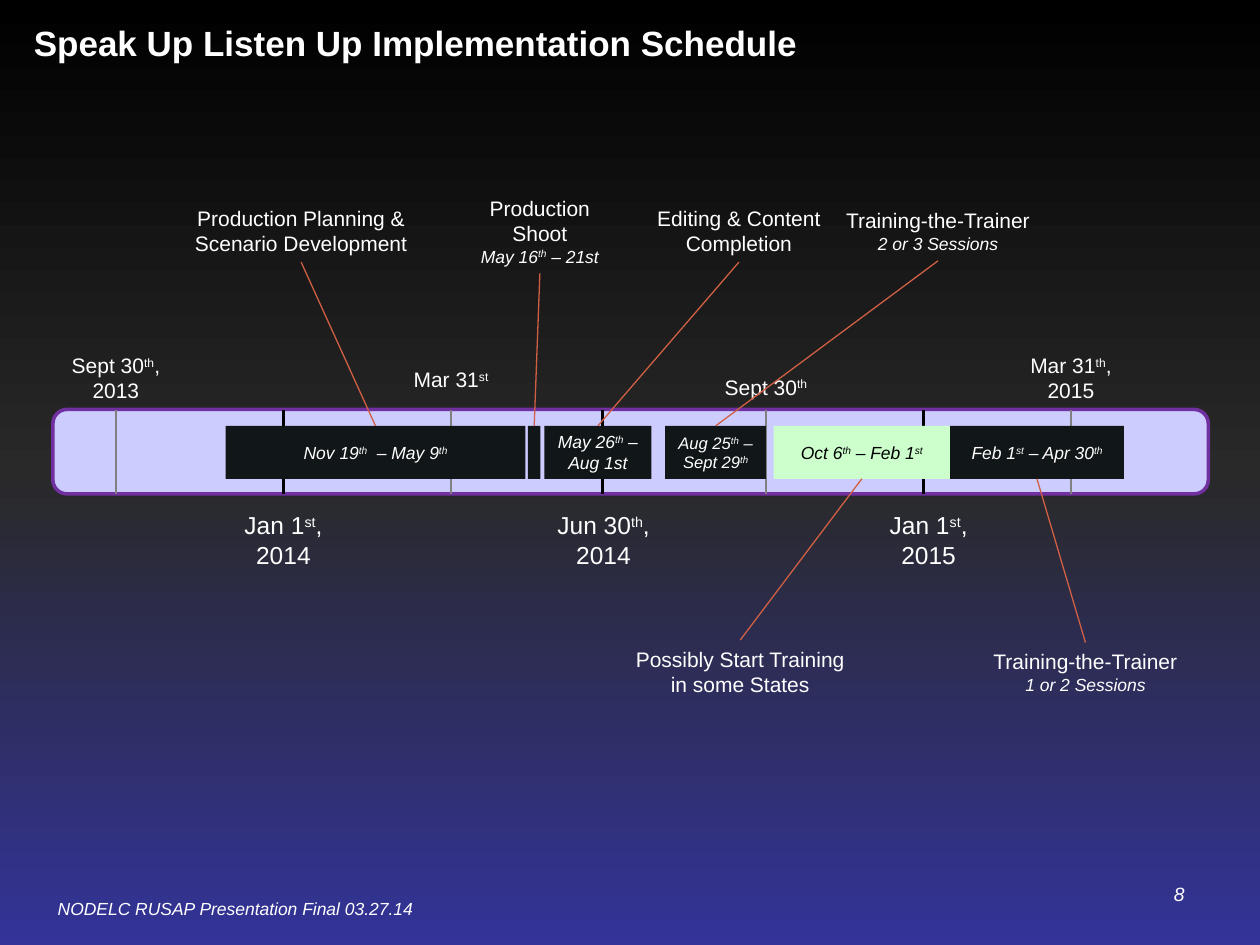
from copy import deepcopy
from dataclasses import dataclass

from pptx import Presentation
from pptx.dml.color import RGBColor
from pptx.enum.shapes import MSO_CONNECTOR, MSO_SHAPE
from pptx.enum.text import MSO_ANCHOR, MSO_AUTO_SIZE, PP_ALIGN
from pptx.oxml.ns import qn
from pptx.util import Inches, Pt

RECT, ROUND = MSO_SHAPE.RECTANGLE, MSO_SHAPE.ROUNDED_RECTANGLE
STRAIGHT = MSO_CONNECTOR.STRAIGHT
TOP, MIDDLE = MSO_ANCHOR.TOP, MSO_ANCHOR.MIDDLE
LEFT, CENTER, RIGHT = PP_ALIGN.LEFT, PP_ALIGN.CENTER, PP_ALIGN.RIGHT
FIT = MSO_AUTO_SIZE.SHAPE_TO_FIT_TEXT
UPPER, LOWER = 0, 2


@dataclass(frozen=True)
class Theme:
    """Colours, font and type sizes of the slide."""
    font: str = "Arial"
    white: str = "FFFFFF"
    black: str = "000000"
    dark: str = "111618"
    mint: str = "CCFFCC"
    band: str = "CCCCFF"
    edge: str = "7030A0"
    gray: str = "808080"
    lead: str = "D05F44"
    back: tuple = ("000000", "292929", "333399")
    title: float = 20
    year: float = 14
    label: float = 12
    page: float = 11
    small: float = 10
    tight: float = 9.5


THEME = Theme()
BAND_TOP, BAND_END = 3.25, 3.92
BAR_TOP, BAR_TALL = 3.38, 0.42

TICKS = [
    (0.92, THEME.gray, 1.5), (2.25, THEME.black, 2), (3.58, THEME.gray, 1.5),
    (4.78, THEME.black, 2), (6.08, THEME.gray, 1.5), (7.33, THEME.black, 2),
    (8.5, THEME.gray, 1.5),
]
DATES = [
    ("Jan 1^st^, 2014", (1.75, 4, 1, 0.57), THEME.year),
    ("Jun 30^th^, 2014", (4.25, 4, 1.08, 0.57), THEME.year),
    ("Jan 1^st^, 2015", (6.83, 4, 1.08, 0.57), THEME.year),
    ("Sept 30^th^, 2013", (0.42, 2.75, 1, 0.5), THEME.label),
    ("Mar 31^st^", (3.08, 2.86, 1, 0.3), THEME.label),
    ("Sept 30^th^", (5.58, 2.92, 1, 0.3), THEME.label),
    ("Mar 31^th^, 2015", (8, 2.75, 1, 0.5), THEME.label),
]
PHASES = [
    (1.79, 2.38, THEME.dark, THEME.white, THEME.small, "Nov 19^th^  – May 9^th^",
     "Production Planning & Scenario Development", "", (1.33, 1.58, 2.12, 0.5)),
    (4.19, 0.1, THEME.dark, THEME.white, THEME.small, "",
     "Production Shoot", "May 16^th^ – 21st", (3.67, 1.5, 1.23, 0.67)),
    (4.32, 0.85, THEME.dark, THEME.white, THEME.small, "May 26^th^ – Aug 1st",
     "Editing & Content Completion", "", (5, 1.58, 1.73, 0.5)),
    (5.28, 0.8, THEME.dark, THEME.white, THEME.tight, "Aug 25^th^ – Sept 29^th^",
     "Training-the-Trainer", "2 or 3 Sessions", (6.58, 1.6, 1.73, 0.47)),
    (6.14, 1.4, THEME.mint, THEME.black, THEME.small, "Oct 6^th^ – Feb 1^st^",
     "Possibly Start Training in some States", "", (4.9, 5.08, 1.95, 0.5)),
    (7.54, 1.38, THEME.dark, THEME.white, THEME.small, "Feb 1^st^ – Apr 30^th^",
     "Training-the-Trainer", "1 or 2 Sessions", (7.75, 5.1, 1.73, 0.47)),
]


def rgb(code):
    """Turn a hex code into a colour."""
    return RGBColor.from_string(code)


def inch(*nums):
    """Turn numbers into lengths."""
    return [Inches(num) for num in nums]


def write(para, text, size, color=THEME.white, bold=False, italic=False, align=CENTER):
    """Add runs to a paragraph, raising the parts set between carets."""
    para.alignment = align
    for spot, part in enumerate(text.split("^")):
        if not part:
            continue
        run = para.add_run()
        run.text = part
        font = run.font
        font.name, font.size = THEME.font, Pt(size)
        font.bold, font.italic = bold, italic
        font.color.rgb = rgb(color)
        if spot % 2:
            run._r.get_or_add_rPr().set("baseline", "30000")


def add_text(slide, text, area, size, anchor=TOP, wrap=True, **style):
    """Place a text box with one styled paragraph."""
    box = slide.shapes.add_textbox(*inch(*area))
    frame = box.text_frame
    frame.word_wrap = wrap
    frame.vertical_anchor = anchor
    if anchor == TOP:
        frame.auto_size = FIT
    write(frame.paragraphs[0], text, size, **style)
    return box


def add_box(slide, kind, area, fill):
    """Place a flat filled shape without an outline."""
    box = slide.shapes.add_shape(kind, *inch(*area))
    box.shadow.inherit = False
    box.fill.solid()
    box.fill.fore_color.rgb = rgb(fill)
    box.line.fill.background()
    return box


def add_line(slide, ends, color, width):
    """Draw a straight line without a shadow."""
    line = slide.shapes.add_connector(STRAIGHT, *inch(*ends))
    line.line.color.rgb = rgb(color)
    line.line.width = Pt(width)
    props = line._element.spPr
    props.append(props.makeelement(qn("a:effectLst"), {}))
    return line


def add_bar(slide, left, wide, fill, ink, size, text):
    """Place one phase bar on the band."""
    bar = add_box(slide, RECT, (left, BAR_TOP, wide, BAR_TALL), fill)
    if text:
        frame = bar.text_frame
        frame.word_wrap = True
        frame.vertical_anchor = MIDDLE
        frame.margin_left = frame.margin_right = Inches(0.05)
        write(frame.paragraphs[0], text, size, ink, italic=True)
    return bar


def add_phase(slide, left, wide, fill, ink, size, dates, name, note, area):
    """Place a phase bar with its callout and leader."""
    bar = add_bar(slide, left, wide, fill, ink, size, dates)
    label = add_text(slide, name, area, THEME.label)
    if note:
        write(label.text_frame.add_paragraph(), note, THEME.small, italic=True)
    line = add_line(slide, (0, 0, 1, 1), THEME.lead, 0.75)
    above = area[1] < BAR_TOP
    line.begin_connect(label, LOWER if above else UPPER)
    line.end_connect(bar, UPPER if above else LOWER)


def paint_back(slide):
    """Fill the background with an even three-stop gradient."""
    fill = slide.background.fill
    fill.gradient()
    fill.gradient_angle = 270
    stops = slide._element.find(".//" + qn("a:gsLst"))
    stops.append(deepcopy(stops[-1]))
    for spot, (stop, code) in enumerate(zip(fill.gradient_stops, THEME.back)):
        stop.position = spot / 2
        stop.color.rgb = rgb(code)


def add_band(slide):
    """Draw the timeline band and its ticks."""
    band = add_box(slide, ROUND, (0.42, BAND_TOP, 9.17, BAND_END - BAND_TOP), THEME.band)
    band.line.color.rgb = rgb(THEME.edge)
    band.line.width = Pt(2)
    for left, color, width in TICKS:
        add_line(slide, (left, BAND_TOP, left, BAND_END), color, width)


def main():
    """Build and save the schedule slide."""
    deck = Presentation()
    deck.slide_width, deck.slide_height = inch(10, 7.5)
    slide = deck.slides.add_slide(deck.slide_layouts[6])
    paint_back(slide)
    add_text(slide, "NODELC RUSAP Presentation Final 03.27.14", (0.36, 7.08, 3.05, 0.27),
             THEME.small, wrap=False, italic=True, align=LEFT)
    add_text(slide, "Speak Up Listen Up Implementation Schedule", (0.17, 0, 9.83, 0.67),
             THEME.title, MIDDLE, bold=True, align=LEFT)
    add_text(slide, "8", (7.17, 6.83, 2.33, 0.52), THEME.page, MIDDLE,
             italic=True, align=RIGHT)
    add_band(slide)
    for text, area, size in DATES:
        add_text(slide, text, area, size)
    for phase in PHASES:
        add_phase(slide, *phase)
    deck.save("out.pptx")


if __name__ == "__main__":
    main()
